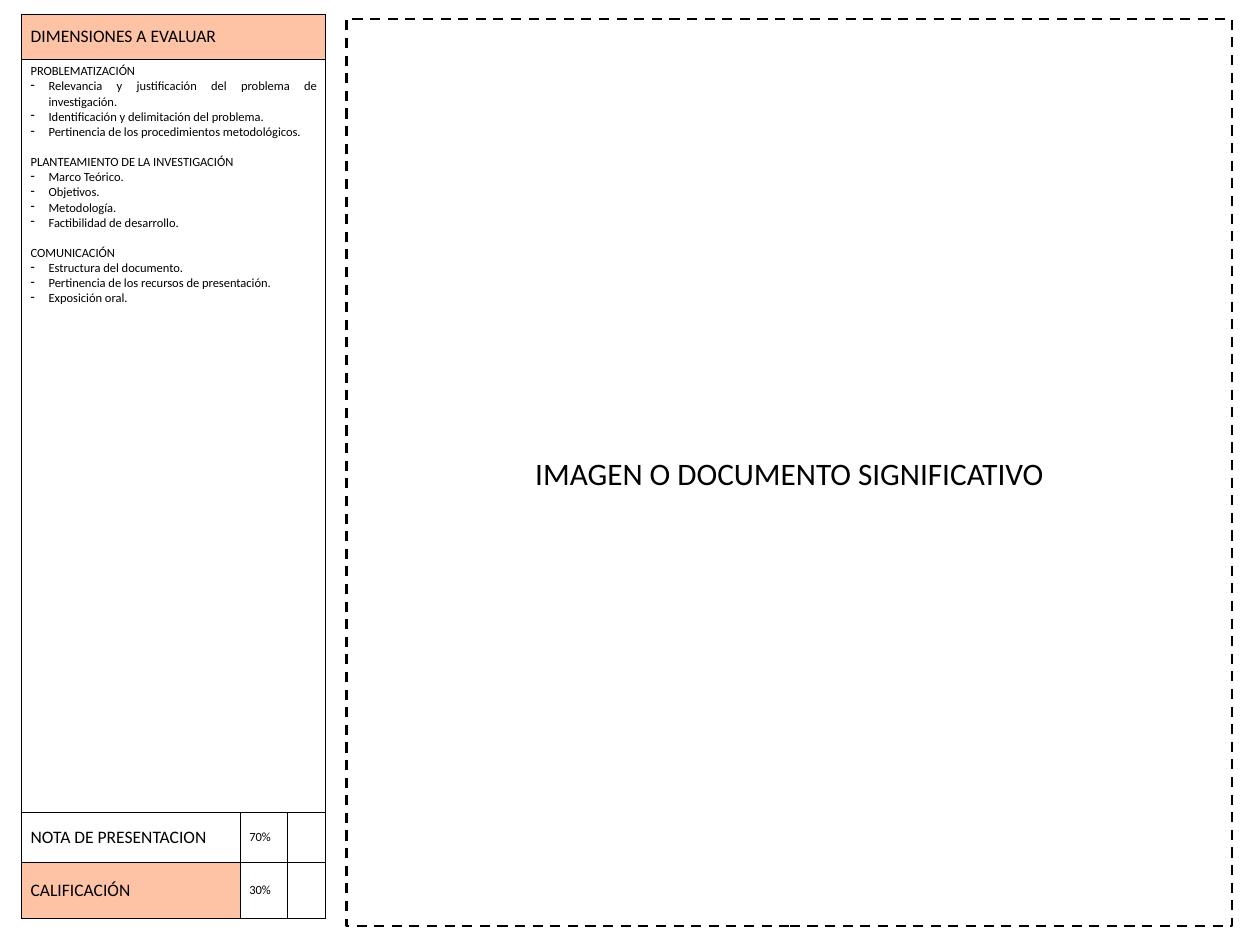
from lxml.etree import SubElement
from pptx import Presentation
from pptx.dml.color import RGBColor
from pptx.enum.dml import MSO_LINE
from pptx.enum.shapes import MSO_SHAPE
from pptx.enum.text import MSO_ANCHOR as ANCHOR, PP_ALIGN as ALIGN
from pptx.oxml import parse_xml
from pptx.oxml.ns import nsdecls, qn
from pptx.util import Inches, Pt

BLACK = RGBColor(0x00, 0x00, 0x00)
WHITE = RGBColor(0xFF, 0xFF, 0xFF)
PEACH = RGBColor(0xFD, 0xC3, 0xA4)


def write(tf, text, size=10, align=ALIGN.JUSTIFY, bullet=False, before=0):
    """Fill the first paragraph, or add one after it."""
    p = tf.paragraphs[0] if not tf.text else tf.add_paragraph()
    p.alignment = align
    p.space_before = Pt(before)
    r = p.add_run()
    r.text = text
    r.font.size = Pt(size)
    r.font.name = "Calibri"
    r.font.color.rgb = BLACK
    if bullet:
        pPr = p._p.get_or_add_pPr()
        pPr.set("marL", str(Inches(0.2)))
        pPr.set("indent", str(-Inches(0.2)))
        SubElement(pPr, qn("a:buChar")).set("char", "-")


def set_borders(cell, widths):
    """Draw black borders, widths in points: left, right, top, bottom."""
    tcPr = cell._tc.get_or_add_tcPr()
    for i, (side, width) in enumerate(zip("LRTB", widths)):
        tcPr.insert(i, parse_xml(
            f'<a:ln{side} {nsdecls("a")} w="{Pt(width)}"><a:solidFill>'
            f'<a:srgbClr val="{BLACK}"/></a:solidFill></a:ln{side}>'))


prs = Presentation()
prs.slide_width, prs.slide_height = Inches(14), Inches(10.5)
s = prs.slides.add_slide(prs.slide_layouts[6])

# Dashed frame for the image or document
frame = s.shapes.add_shape(MSO_SHAPE.RECTANGLE, Inches(3.85), Inches(0.21),
                           Inches(9.84), Inches(10.08))
frame.shadow.inherit = False
frame.fill.background()
frame.line.color.rgb = BLACK
frame.line.width = Pt(2)
frame.line.dash_style = MSO_LINE.DASH
frame.text_frame.vertical_anchor = ANCHOR.MIDDLE
write(frame.text_frame, "IMAGEN O DOCUMENTO SIGNIFICATIVO", size=25, align=ALIGN.CENTER)

# Evaluation table
col_widths = [2.43, 0.52, 0.43]
row_heights = [0.5, 8.37, 0.55, 0.63]
table = s.shapes.add_table(4, 3, Inches(0.24), Inches(0.16),
                           Inches(sum(col_widths)), Inches(sum(row_heights))).table
table.first_row = table.horz_banding = False
for col, width in zip(table.columns, col_widths):
    col.width = Inches(width)
for row, height in zip(table.rows, row_heights):
    row.height = Inches(height)
for row in (0, 1):
    table.cell(row, 0).merge(table.cell(row, 2))

# Fills, anchors and borders: the outer edge is heavier than the grade grid
peach_cells = [(0, 0), (3, 0)]
for row in range(4):
    for col in range(3):
        cell = table.cell(row, col)
        cell.vertical_anchor = ANCHOR.TOP if row == 1 else ANCHOR.MIDDLE
        cell.fill.solid()
        cell.fill.fore_color.rgb = PEACH if (row, col) in peach_cells else WHITE
        if row < 2:
            set_borders(cell, (1, 1, 1, 1))
        else:
            set_borders(cell, (0.5 if col == 1 else 1, 0.5 if col == 0 else 1,
                               1 if row == 2 else 0.5, 0.5 if row == 2 else 1))

# Headings and grades
write(table.cell(0, 0).text_frame, "DIMENSIONES A EVALUAR", size=14)
grades = [("NOTA DE PRESENTACION", "70%"), ("CALIFICACIÓN", "30%")]
for row, (label, weight) in enumerate(grades, start=2):
    write(table.cell(row, 0).text_frame, label, size=14)
    write(table.cell(row, 1).text_frame, weight)

# Criteria by dimension
dimensions = {
    "PROBLEMATIZACIÓN": [
        "Relevancia y justificación del problema de investigación.",
        "Identificación y delimitación del problema.",
        "Pertinencia de los procedimientos metodológicos."],
    "PLANTEAMIENTO DE LA INVESTIGACIÓN": [
        "Marco Teórico.", "Objetivos.", "Metodología.", "Factibilidad de desarrollo."],
    "COMUNICACIÓN": [
        "Estructura del documento.",
        "Pertinencia de los recursos de presentación.",
        "Exposición oral."],
}
tf = table.cell(1, 0).text_frame
for heading, criteria in dimensions.items():
    write(tf, heading, before=12 if tf.text else 0)
    for criterion in criteria:
        write(tf, criterion, bullet=True)

prs.save("out.pptx")
